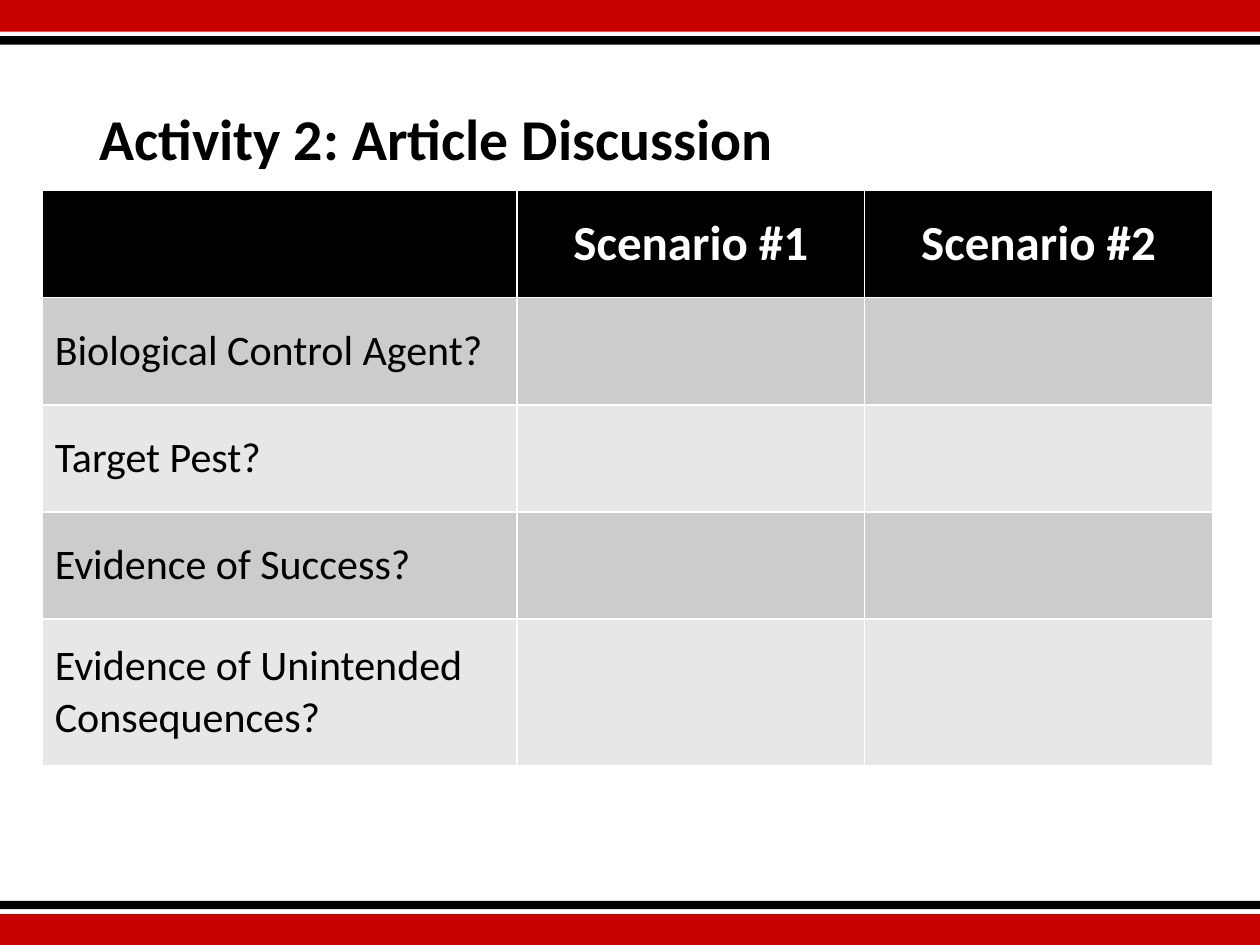
"""Build a slide with a scenario comparison table between striped bands."""
from dataclasses import dataclass

from pptx import Presentation
from pptx.dml.color import RGBColor
from pptx.enum.text import MSO_ANCHOR, PP_ALIGN
from pptx.util import Cm, Pt

MIDDLE = MSO_ANCHOR.MIDDLE
LEFT = PP_ALIGN.LEFT
CENTER = PP_ALIGN.CENTER
TITLE_ONLY = 5
SLIDE_WIDTH = 25.4
SLIDE_HEIGHT = 19.05


@dataclass(frozen=True)
class Theme:
    font: str = "Calibri"
    red: str = "C80200"
    black: str = "000000"
    white: str = "FFFFFF"
    row_fills: tuple = ("CCCCCC", "E7E7E7")
    title_size: int = 33
    header_size: int = 28
    body_size: int = 24


class SlideBuilder:
    def __init__(self, slide, theme):
        self.slide = slide
        self.theme = theme

    def format_paragraph(self, paragraph, size, color, bold, alignment):
        paragraph.alignment = alignment
        font = paragraph.font
        font.name = self.theme.font
        font.size = Pt(size)
        font.bold = bold
        font.color.rgb = RGBColor.from_string(color)

    def add_band(self, top, height, color):
        shape = self.slide.shapes.add_shape(
            1, 0, Cm(top), Cm(SLIDE_WIDTH), Cm(height))
        shape.shadow.inherit = False
        shape.fill.solid()
        shape.fill.fore_color.rgb = RGBColor.from_string(color)
        shape.line.fill.background()

    def set_title(self, text, left, top, width, height):
        title = self.slide.shapes.title
        title.left, title.top = Cm(left), Cm(top)
        title.width, title.height = Cm(width), Cm(height)
        title.text_frame.text = text
        title.text_frame.vertical_anchor = MIDDLE
        paragraph = title.text_frame.paragraphs[0]
        paragraph.line_spacing = 0.9
        self.format_paragraph(
            paragraph, self.theme.title_size, self.theme.black, True, LEFT)

    def fill_cell(self, cell, text, is_header, fill):
        theme = self.theme
        cell.fill.solid()
        cell.fill.fore_color.rgb = RGBColor.from_string(fill)
        cell.vertical_anchor = MIDDLE
        if not text:
            return
        cell.text = text
        paragraph = cell.text_frame.paragraphs[0]
        if is_header:
            self.format_paragraph(
                paragraph, theme.header_size, theme.white, True, CENTER)
        else:
            self.format_paragraph(
                paragraph, theme.body_size, theme.black, False, LEFT)

    def add_table(self, rows, left, top, column_widths, row_heights):
        table = self.slide.shapes.add_table(
            len(rows), len(column_widths), Cm(left), Cm(top),
            Cm(sum(column_widths)), Cm(sum(row_heights))).table
        for column, width in zip(table.columns, column_widths):
            column.width = Cm(width)
        for index, (texts, height) in enumerate(zip(rows, row_heights)):
            table.rows[index].height = Cm(height)
            is_header = index == 0
            fill = (self.theme.black if is_header
                    else self.theme.row_fills[(index - 1) % 2])
            for column_index, text in enumerate(texts):
                self.fill_cell(
                    table.cell(index, column_index), text, is_header, fill)


def main():
    presentation = Presentation()
    presentation.slide_width = Cm(SLIDE_WIDTH)
    presentation.slide_height = Cm(SLIDE_HEIGHT)
    slide = presentation.slides.add_slide(
        presentation.slide_layouts[TITLE_ONLY])
    theme = Theme()
    builder = SlideBuilder(slide, theme)

    for top, height, color in (
            (0, 0.64, theme.red), (18.43, 0.62, theme.red),
            (0.73, 0.17, theme.black), (18.16, 0.17, theme.black)):
        builder.add_band(top, height, color)

    builder.set_title("Activity 2: Article Discussion", 1.75, 1.02, 21.9, 3.68)

    questions = (
        "Biological Control Agent?",
        "Target Pest?",
        "Evidence of Success?",
        "Evidence of Unintended Consequences?",
    )
    rows = [("", "Scenario #1", "Scenario #2")]
    rows += [(question, "", "") for question in questions]
    builder.add_table(
        rows, 0.85, 3.84, (9.57, 7.01, 7.01), [2.16] * 4 + [2.95])
    presentation.save("out.pptx")


if __name__ == "__main__":
    main()
